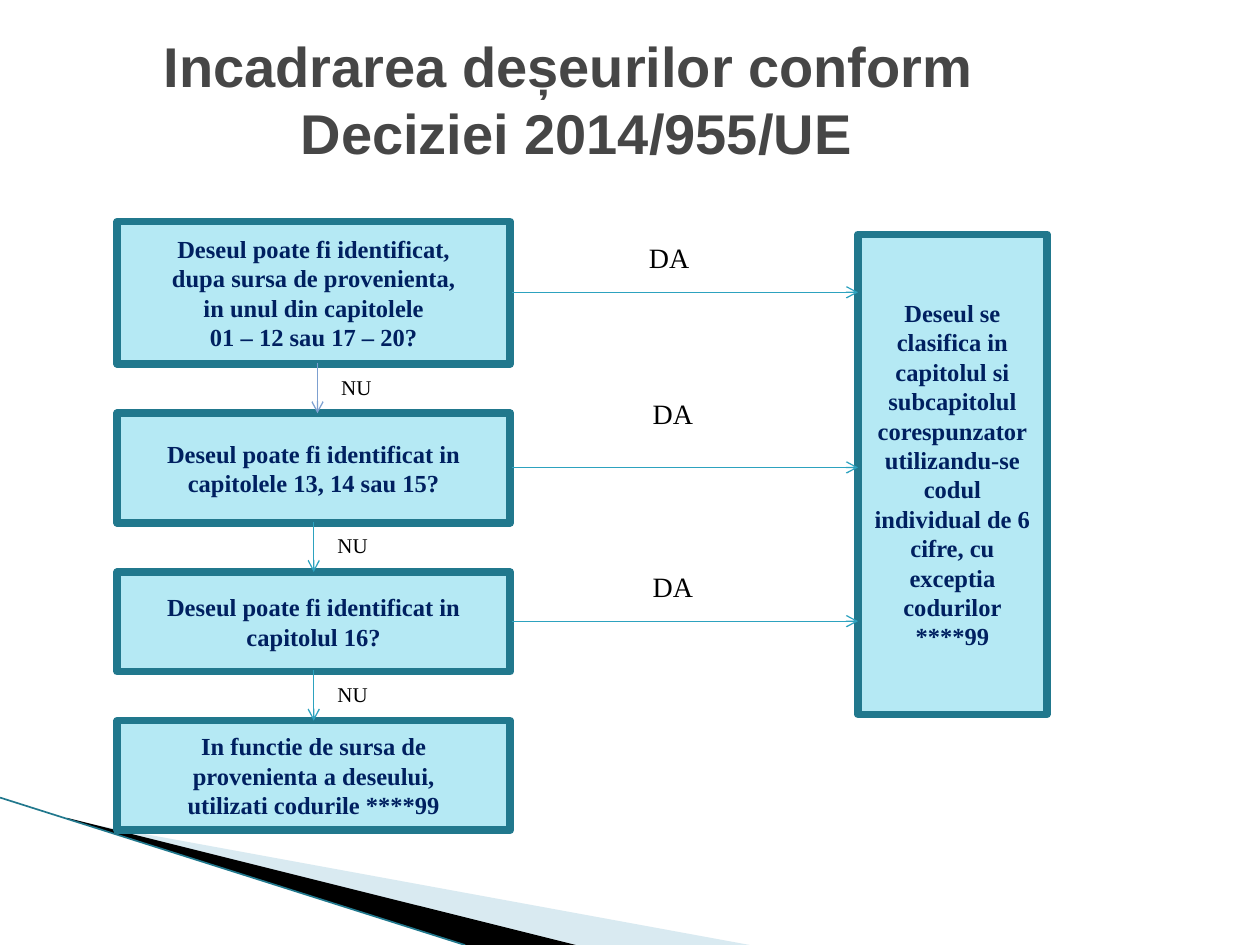
from lxml.etree import SubElement
from pptx import Presentation
from pptx.dml.color import RGBColor
from pptx.enum.shapes import MSO_CONNECTOR as CONN, MSO_SHAPE as SHAPE
from pptx.enum.text import MSO_ANCHOR as ANCHOR, PP_ALIGN as ALIGN
from pptx.oxml.ns import qn
from pptx.util import Pt

PX = 9144  # 100 px to the inch
WHITE = RGBColor(0xFF, 0xFF, 0xFF)
BLACK = RGBColor(0x00, 0x00, 0x00)
GREY = RGBColor(0x46, 0x46, 0x46)
NAVY = RGBColor(0x00, 0x20, 0x60)
PALE = RGBColor(0xB5, 0xE9, 0xF4)
TEAL = RGBColor(0x21, 0x78, 0x8D)
AQUA = RGBColor(0x2D, 0xA2, 0xBF)
BLUE = RGBColor(0x7D, 0xA0, 0xD0)
MIST = RGBColor(0xA0, 0xCB, 0xDC)


def write(sp, text, size=14, font="Times New Roman", color=BLACK, bold=False,
          align=ALIGN.CENTER, anchor=ANCHOR.MIDDLE, wrap=True):
    """Fill a shape with one paragraph per line of text."""
    tf = sp.text_frame
    tf.word_wrap = wrap
    tf.vertical_anchor = anchor
    for i, line in enumerate(text.split("\n")):
        p = tf.add_paragraph() if i else tf.paragraphs[0]
        p.text = line
        p.alignment = align
        for r in p.runs:
            r.font.name, r.font.size, r.font.bold = font, Pt(size), bold
            r.font.color.rgb = color


def connect(x1, y1, x2, y2, color, width=0.75, arrow=True):
    c = s.shapes.add_connector(CONN.STRAIGHT, x1 * PX, y1 * PX, x2 * PX, y2 * PX)
    c.line.color.rgb = color
    c.line.width = Pt(width)
    spPr = c._element.spPr
    if arrow:
        SubElement(spPr.find(qn("a:ln")), qn("a:tailEnd"), type="arrow")
    SubElement(spPr, qn("a:effectLst"))


prs = Presentation()
prs.slide_width, prs.slide_height = 1000 * PX, 750 * PX
s = prs.slides.add_slide(prs.slide_layouts[6])
s.background.fill.solid()
s.background.fill.fore_color.rgb = WHITE

# Corner wedges
wedges = [
    (MIST, 40, [(55, 651), (595, 750), (456, 750), (55, 650)]),
    (BLACK, 100, [(53, 649), (457, 750), (370, 750), (54, 650)]),
]
for color, opacity, points in wedges:
    fb = s.shapes.build_freeform(*points[0], scale=PX)
    fb.add_line_segments(points[1:])
    sp = fb.convert_to_shape()
    sp.shadow.inherit = False
    sp.fill.solid()
    sp.fill.fore_color.rgb = color
    sp.line.fill.background()
    if opacity < 100:
        clr = sp._element.spPr.find(qn("a:solidFill"))[0]
        SubElement(clr, qn("a:alpha"), val=str(opacity * 1000))
connect(0, 633, 369, 750, TEAL, width=0.95, arrow=False)

title = s.shapes.add_textbox(-23 * PX, 16 * PX, 961 * PX, 125 * PX)
write(title, "Incadrarea deșeurilor conform \vDeciziei 2014/955/UE",
      size=32, font="Arial", color=GREY, bold=True)

# Questions on the left, outcome on the right
boxes = [
    (93, 176, 312, 113, "Deseul poate fi identificat,\ndupa sursa de provenienta,\n"
                        "in unul din capitolele\n01 – 12 sau 17 – 20?"),
    (93, 328, 312, 87, "Deseul poate fi identificat in\ncapitolele 13, 14 sau 15?"),
    (93, 454, 312, 79, "Deseul poate fi identificat in\ncapitolul 16?"),
    (93, 572, 312, 87, "In functie de sursa de\nprovenienta a deseului,\n"
                       "utilizati codurile ****99"),
    (681, 186, 150, 381, "Deseul se\nclasifica in\ncapitolul si\nsubcapitolul\n"
                         "corespunzator\nutilizandu-se\ncodul\nindividual de 6\n"
                         "cifre, cu\nexceptia\ncodurilor\n****99"),
]
for x, y, w, h, text in boxes:
    sp = s.shapes.add_shape(SHAPE.RECTANGLE, x * PX, y * PX, w * PX, h * PX)
    sp.shadow.inherit = False
    sp.fill.solid()
    sp.fill.fore_color.rgb = PALE
    sp.line.color.rgb = TEAL
    sp.line.width = Pt(4.33)
    SubElement(sp._element.spPr.find(qn("a:ln")), qn("a:round"))
    write(sp, text, color=NAVY, bold=True)

# "No" leads down to the next question
for x, y, color in [(252, 288, BLUE), (249, 414, AQUA), (249, 532, AQUA)]:
    connect(x, y, x, y + 40, color)
    tb = s.shapes.add_textbox((x + 9) * PX, (y + 4) * PX, 44 * PX, 30 * PX)
    write(tb, "NU", size=12, align=ALIGN.LEFT, anchor=ANCHOR.TOP, wrap=False)

# "Yes" leads across to the outcome
for y, label_x, label_y in [(232, 499, 186), (371, 502, 310), (493, 502, 447)]:
    connect(406, y, 681, y, AQUA)
    tb = s.shapes.add_textbox(label_x * PX, label_y * PX, 64 * PX, 37 * PX)
    write(tb, "DA", size=16, anchor=ANCHOR.TOP)

prs.save("out.pptx")
